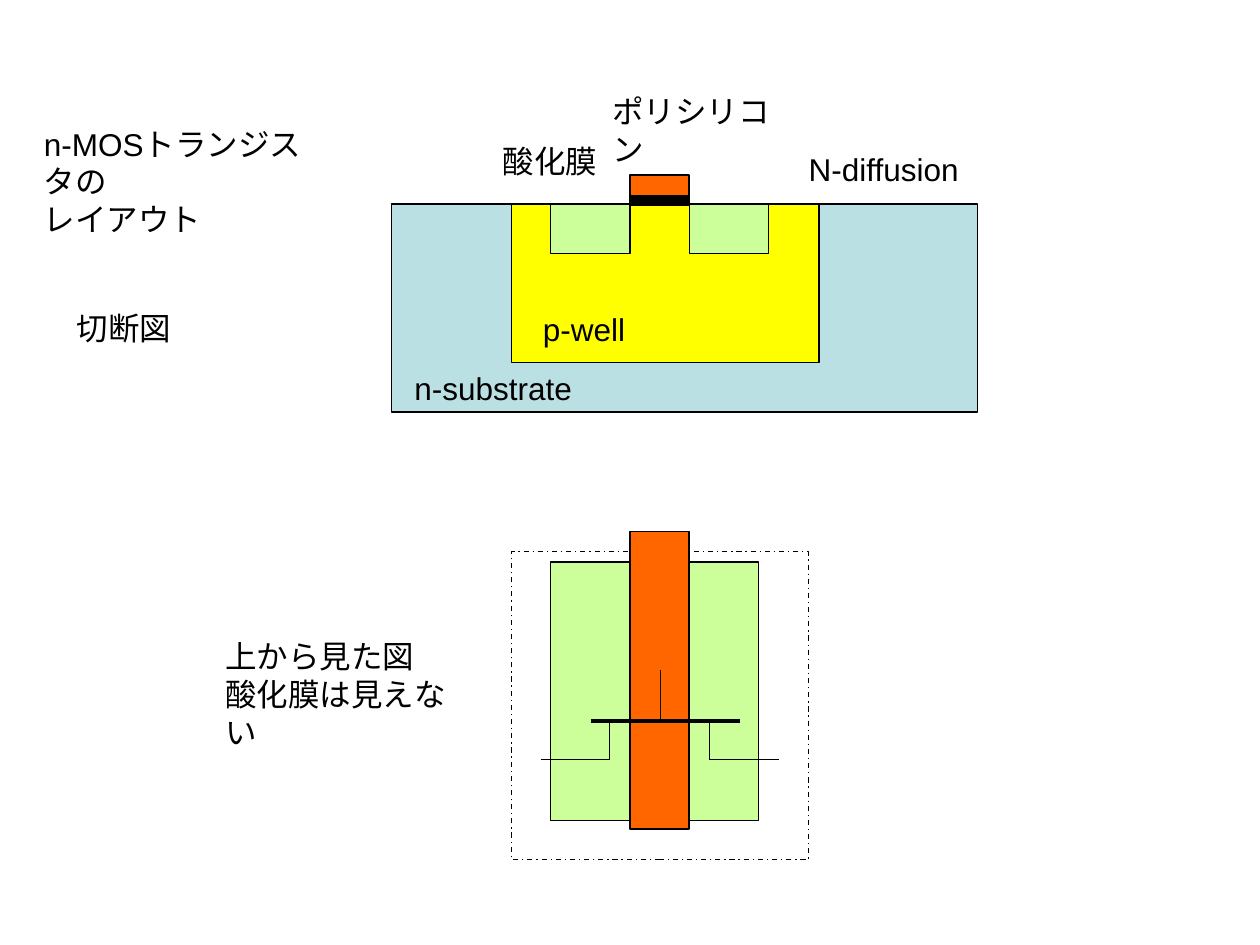
from lxml.etree import SubElement
from pptx import Presentation
from pptx.dml.color import RGBColor
from pptx.enum.dml import MSO_LINE
from pptx.enum.shapes import MSO_CONNECTOR, MSO_SHAPE
from pptx.enum.text import MSO_AUTO_SIZE
from pptx.oxml.ns import qn
from pptx.util import Inches, Pt

BLACK = "000000"
SUBSTRATE = "BBE0E3"
WELL = "FFFF00"
POLYSILICON = "FF6600"
DIFFUSION = "CCFF99"


def color(value):
    return RGBColor.from_string(value)


def add_text(shapes, text, left, top, width, height=0.4, wrap=False, size=18, font="Arial", fill=BLACK):
    box = shapes.add_textbox(Inches(left), Inches(top), Inches(width), Inches(height))
    frame = box.text_frame
    frame.word_wrap = wrap
    frame.auto_size = MSO_AUTO_SIZE.SHAPE_TO_FIT_TEXT
    frame.text = text
    for paragraph in frame.paragraphs:
        paragraph.font.size = Pt(size)
        paragraph.font.name = font
        paragraph.font.color.rgb = color(fill)


presentation = Presentation()
presentation.slide_width = Inches(10)
presentation.slide_height = Inches(7.5)
slide = presentation.slides.add_slide(presentation.slide_layouts[6])

surface = 1.62
gate_left, gate_width = 5, 0.47
gate_right = gate_left + gate_width
source_left, source_width = 4.37, 0.63

rectangles = [
    (3.11, surface, 4.65, 1.65, SUBSTRATE),
    (4.06, surface, 2.44, 1.26, WELL),
    (4.06, 4.38, 2.36, 2.44, None),
    (gate_left, 4.22, gate_width, 2.36, POLYSILICON),
    (source_left, 4.46, source_width, 2.05, DIFFUSION),
    (gate_right, 4.46, 0.55, 2.05, DIFFUSION),
    (gate_right, surface, source_width, 0.39, DIFFUSION),
    (source_left, surface, source_width, 0.39, DIFFUSION),
    (gate_left, 1.55, gate_width, 0.08, BLACK),
    (gate_left, 1.39, gate_width, 0.16, POLYSILICON),
]
for left, top, width, height, fill in rectangles:
    shape = slide.shapes.add_shape(
        MSO_SHAPE.RECTANGLE, Inches(left), Inches(top), Inches(width), Inches(height)
    )
    shape.shadow.inherit = False
    shape.line.color.rgb = color(BLACK)
    shape.line.width = Pt(0.75)
    if fill:
        shape.fill.solid()
        shape.fill.fore_color.rgb = color(fill)
    else:
        shape.fill.background()
        shape.line.dash_style = MSO_LINE.DASH_DOT

labels = [
    ("p-well", 4.21, 2.41, 0.85),
    ("n-substrate", 3.19, 2.88, 1.45),
    ("N-diffusion", 6.32, 1.14, 1.4),
    ("酸化膜", 3.89, 1.08, 0.95),
    ("切断図", 0.51, 2.4, 0.95),
]
for text, left, top, width in labels:
    add_text(slide.shapes, text, left, top, width)

add_text(slide.shapes, "ポリシリコン", 4.76, 0.68, 1.45, wrap=True)
add_text(slide.shapes, "n-MOSトランジスタの\nレイアウト", 0.25, 0.94, 2.46, height=0.7, wrap=True)
add_text(slide.shapes, "上から見た図\n酸化膜は見えない", 1.69, 5.01, 2.14, height=0.7, wrap=True)

channel, terminal = 5.72, 6.03
symbol_lines = [
    (4.69, channel, 5.87, channel, 2.25),
    (5.24, 5.32, 5.24, channel, 0.75),
    (5.63, channel, 5.63, terminal, 0.75),
    (4.84, channel, 4.84, terminal, 0.75),
    (4.29, terminal, 4.84, terminal, 0.75),
    (5.63, terminal, 6.18, terminal, 0.75),
]
symbol = slide.shapes.add_group_shape()
for start_x, start_y, end_x, end_y, width in symbol_lines:
    connector = symbol.shapes.add_connector(
        MSO_CONNECTOR.STRAIGHT, Inches(start_x), Inches(start_y), Inches(end_x), Inches(end_y)
    )
    connector.line.color.rgb = color(BLACK)
    connector.line.width = Pt(width)
    SubElement(connector._element.spPr, qn("a:effectLst"))

presentation.save("out.pptx")
